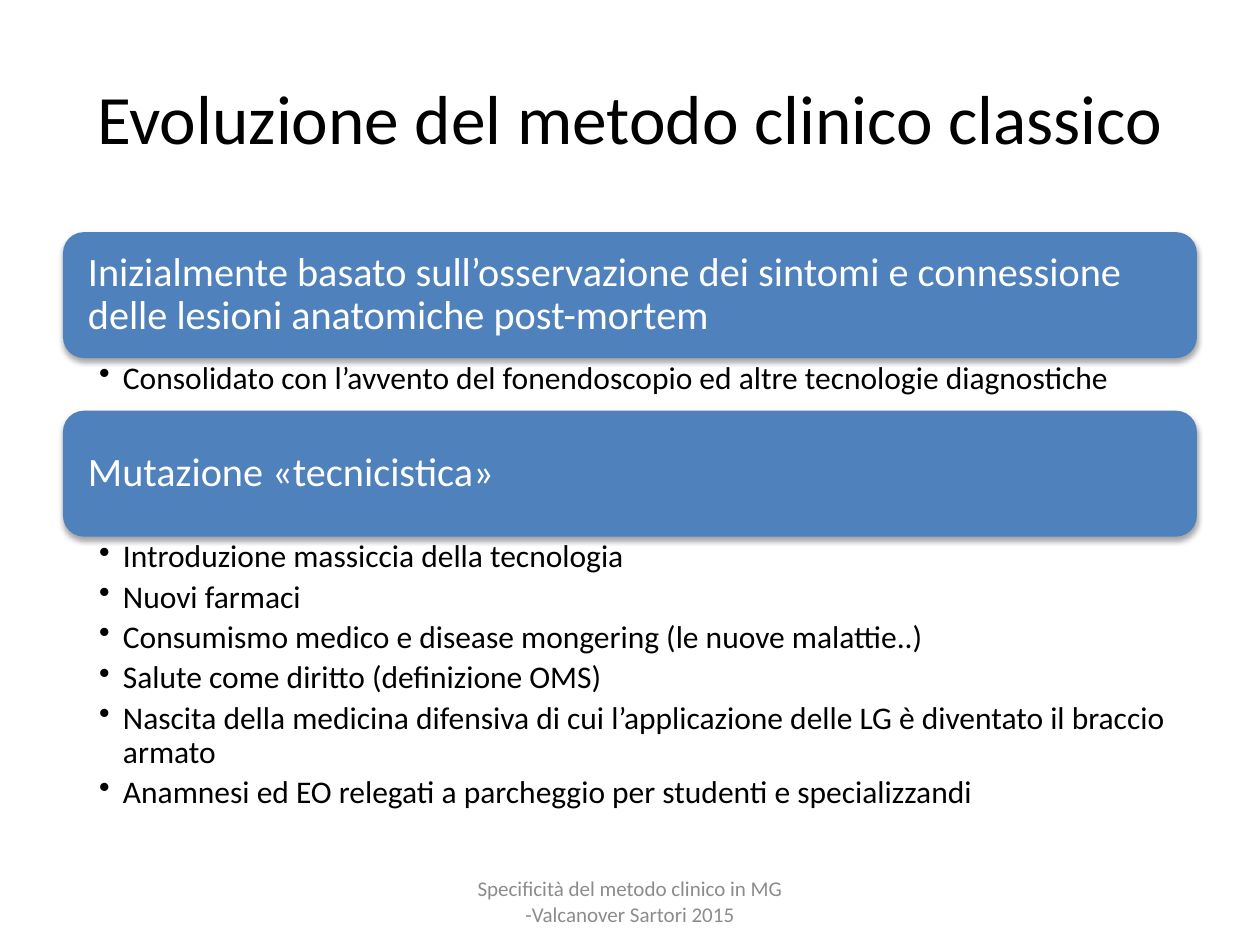
from dataclasses import dataclass

from lxml import etree
from pptx import Presentation
from pptx.dml.color import RGBColor
from pptx.enum.shapes import MSO_SHAPE
from pptx.enum.text import MSO_ANCHOR, PP_ALIGN
from pptx.oxml import parse_xml
from pptx.oxml.ns import qn
from pptx.shapes.autoshape import Shape
from pptx.slide import Slide
from pptx.util import Cm, Pt

ROUND = MSO_SHAPE.ROUNDED_RECTANGLE
TOP, MIDDLE = MSO_ANCHOR.TOP, MSO_ANCHOR.MIDDLE
LEFT, CENTER = PP_ALIGN.LEFT, PP_ALIGN.CENTER

BLACK = RGBColor(0x00, 0x00, 0x00)
WHITE = RGBColor(0xFF, 0xFF, 0xFF)
BLUE = RGBColor(0x4F, 0x81, 0xBD)
GRAY = RGBColor(0x8C, 0x8C, 0x8C)

FONT = "Calibri"
EDGE, WIDE = 1.27, 22.86
HEAD = 2.54
INDENT = 0.48
SHADOW = (
    '<a:effectLst xmlns:a="http://schemas.openxmlformats.org/drawingml/2006/main">'
    '<a:outerShdw blurRad="39370" dist="22860" dir="5400000" rotWithShape="0">'
    '<a:srgbClr val="000000"><a:alpha val="35000"/></a:srgbClr>'
    "</a:outerShdw></a:effectLst>"
)


@dataclass
class Part:
    title: str
    items: list[str]
    tall: float


PARTS = [
    Part(
        "Inizialmente basato sull’osservazione dei sintomi e connessione "
        "delle lesioni anatomiche post-mortem",
        ["Consolidato con l’avvento del fonendoscopio ed altre tecnologie diagnostiche"],
        1.06,
    ),
    Part(
        "Mutazione «tecnicistica»",
        [
            "Introduzione massiccia della tecnologia",
            "Nuovi farmaci",
            "Consumismo medico e disease mongering (le nuove malattie..)",
            "Salute come diritto (definizione OMS)",
            "Nascita della medicina difensiva di cui l’applicazione delle LG "
            "è diventato il braccio armato",
            "Anamnesi ed EO relegati a parcheggio per studenti e specializzandi",
        ],
        5.94,
    ),
]


def write(
    shape: Shape,
    lines: list[str],
    *,
    size: float,
    color: RGBColor = BLACK,
    align: PP_ALIGN = LEFT,
    anchor: MSO_ANCHOR = MIDDLE,
    pad: tuple[float, float, float, float] = (0.25, 0.13, 0.25, 0.13),
    space: float = 1,
    after: float = 0,
    bullet: bool = False,
) -> None:
    frame = shape.text_frame
    frame.word_wrap = True
    frame.vertical_anchor = anchor
    frame.margin_left, frame.margin_top, frame.margin_right, frame.margin_bottom = map(Cm, pad)
    for i, line in enumerate(lines):
        para = frame.add_paragraph() if i else frame.paragraphs[0]
        para.alignment = align
        para.line_spacing = space
        para.space_after = Pt(after)
        run = para.add_run()
        run.text = line
        run.font.name = FONT
        run.font.size = Pt(size)
        run.font.color.rgb = color
        if bullet:
            para.level = 1
            props = para._p.get_or_add_pPr()
            props.set("marL", str(Cm(INDENT)))
            props.set("indent", str(-Cm(INDENT)))
            etree.SubElement(props, qn("a:buChar")).set("char", "•")


def box(slide: Slide, x: float, y: float, w: float, h: float) -> Shape:
    return slide.shapes.add_textbox(Cm(x), Cm(y), Cm(w), Cm(h))


def draw(slide: Slide, part: Part, top: float) -> float:
    bar = slide.shapes.add_shape(ROUND, Cm(EDGE), Cm(top), Cm(WIDE), Cm(HEAD))
    bar.fill.solid()
    bar.fill.fore_color.rgb = BLUE
    bar.line.fill.background()
    bar._element.spPr.append(parse_xml(SHADOW))
    write(bar, [part.title], size=23, color=WHITE, space=0.9, after=8,
          pad=(0.38, 0.38, 0.38, 0.38))
    top += HEAD
    write(box(slide, EDGE, top, WIDE, part.tall), part.items, size=18, anchor=TOP,
          pad=(0.73, 0.08, 0.46, 0.08), space=0.9, after=3.6, bullet=True)
    return top + part.tall


def main() -> None:
    deck = Presentation()
    deck.slide_width, deck.slide_height = Cm(25.4), Cm(19.05)
    slide = deck.slides.add_slide(deck.slide_layouts[6])
    write(box(slide, EDGE, 0.76, WIDE, 3.18), ["Evoluzione del metodo clinico classico"],
          size=39.6, align=CENTER)
    top = 4.68
    for part in PARTS:
        top = draw(slide, part, top)
    write(box(slide, 8.68, 17.66, 8.04, 1.01),
          ["Specificità del metodo clinico in MG -Valcanover Sartori 2015"],
          size=12, color=GRAY, align=CENTER)
    deck.save("out.pptx")


if __name__ == "__main__":
    main()
